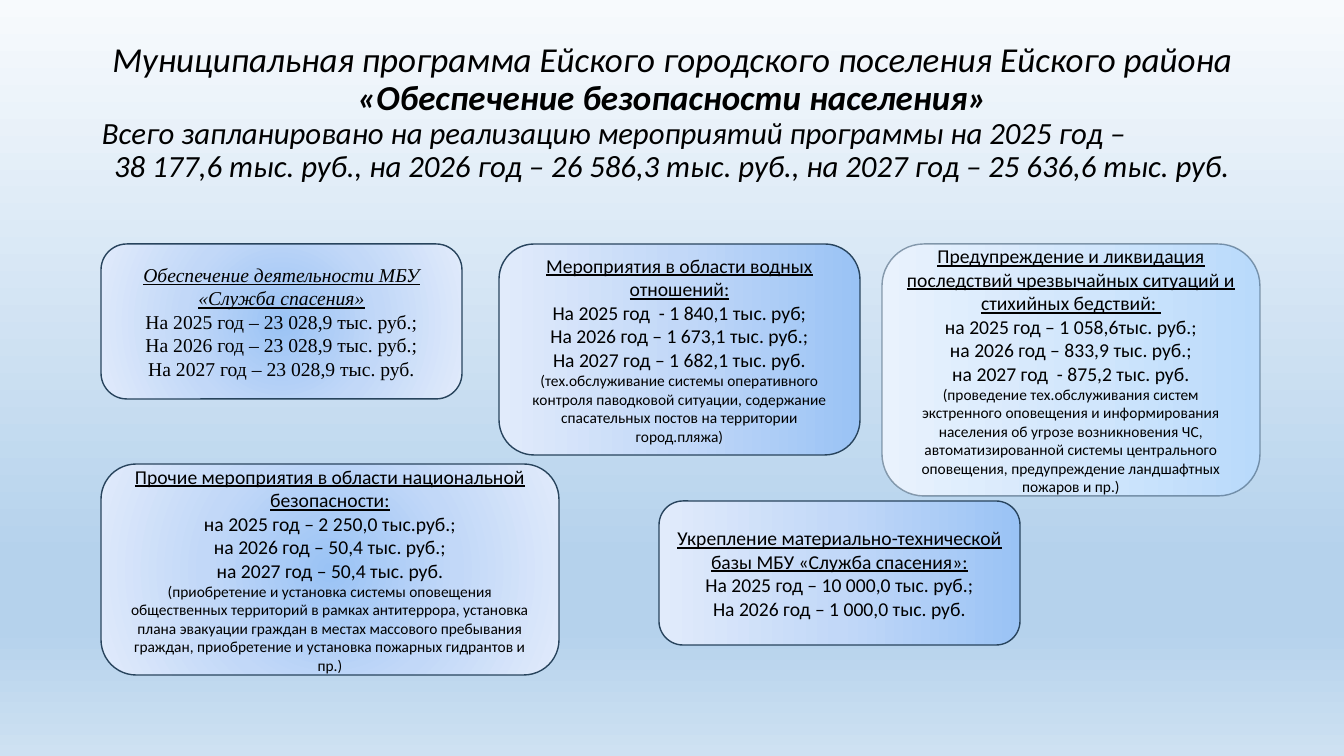
from lxml import etree
from pptx import Presentation
from pptx import util as u
from pptx.dml.color import RGBColor
from pptx.enum import shapes, text
from pptx.oxml import ns

PX = 914400 / 100.8
THEME = {
    "ink": "000000", "line": "28445D",
    "font": "Calibri", "serif": "Times New Roman",
    "title": 25, "total": 22, "head": 14, "note": 11,
    "sky": [(0, "F7FAFD"), (74, "B5D2EC"), (83, "B5D2EC"), (100, "CEE1F2")],
    "blue": [(0, "9AC3F5"), (50, "C2D8F8"), (100, "E1EBFB")],
    "pale": [(0, "B9DAFB"), (50, "D3E7FC"), (100, "E9F2FD")],
}


def write(tf, line, size=THEME["head"], font=THEME["font"], bold=False, italic=False,
          underline=False, align=text.PP_ALIGN.CENTER, spacing=1.0):
    p = tf.paragraphs[0] if not tf.text else tf.add_paragraph()
    p.alignment, p.line_spacing = align, spacing
    r = p.add_run()
    r.text = line
    r.font.name, r.font.size = font, u.Pt(size)
    r.font.bold, r.font.italic, r.font.underline = bold, italic, underline
    r.font.color.rgb = RGBColor.from_string(THEME["ink"])


def paint(fill, props, stops, angle=None):
    """Fill with a gradient: linear at an angle, or from the centre without one."""
    fill.solid()
    solid = props.find(ns.qn("a:solidFill"))
    grad = etree.Element(ns.qn("a:gradFill"), rotWithShape="1")
    stop_list = etree.SubElement(grad, ns.qn("a:gsLst"))
    for pos, color in stops:
        gs = etree.SubElement(stop_list, ns.qn("a:gs"), pos=str(pos * 1000))
        etree.SubElement(gs, ns.qn("a:srgbClr"), val=color)
    if angle is None:
        radial = etree.SubElement(grad, ns.qn("a:path"), {"path": "circle"})
        etree.SubElement(radial, ns.qn("a:fillToRect"), dict.fromkeys("ltrb", "50000"))
    else:
        etree.SubElement(grad, ns.qn("a:lin"), ang=str(angle * 60000), scaled="0")
    props.replace(solid, grad)


prs = Presentation()
prs.slide_width, prs.slide_height = u.Emu(round(1344 * PX)), u.Emu(round(756 * PX))
s = prs.slides.add_slide(prs.slide_layouts[6])

# Background
fill = s.background.fill
fill.solid()
paint(fill, s._element.xpath(".//p:bgPr")[0], THEME["sky"], 90)

# Title and programme total
sp = s.shapes.add_textbox(*[u.Emu(round(v * PX)) for v in (92, 14, 1160, 198)])
tf = sp.text_frame
tf.word_wrap, tf.vertical_anchor = True, text.MSO_ANCHOR.MIDDLE
title = {"italic": True, "spacing": 0.9}
write(tf, "Муниципальная программа Ейского городского поселения Ейского района",
      size=THEME["title"], **title)
write(tf, "«Обеспечение безопасности населения»", size=THEME["title"], bold=True, **title)
write(tf, "Всего запланировано на реализацию мероприятий программы на 2025 год –",
      size=THEME["total"], align=text.PP_ALIGN.LEFT, **title)
write(tf, "38 177,6 тыс. руб., на 2026 год – 26 586,3 тыс. руб., на 2027 год – 25 636,6 тыс. руб.",
      size=THEME["total"], **title)

# Measures: box, gradient, angle, font, heading, yearly sums, note
measures = [
    ((882, 244, 378, 252), "pale", 180, "font",
     "Предупреждение и ликвидация последствий чрезвычайных ситуаций и стихийных бедствий: ",
     ["на 2025 год – 1 058,6тыс. руб.;", "на 2026 год – 833,9 тыс. руб.;",
      "на 2027 год  - 875,2 тыс. руб."],
     "(проведение тех.обслуживания систем экстренного оповещения и информирования населения "
     "об угрозе возникновения ЧС, автоматизированной системы центрального оповещения, "
     "предупреждение ландшафтных пожаров и пр.)"),
    ((101, 244, 361, 155), "blue", None, "serif",
     "Обеспечение деятельности МБУ «Служба спасения»",
     ["На 2025 год – 23 028,9 тыс. руб.;", "На 2026 год – 23 028,9 тыс. руб.;",
      "На 2027 год – 23 028,9 тыс. руб."], None),
    ((499, 244, 361, 211), "blue", 180, "font",
     "Мероприятия в области водных отношений:",
     ["На 2025 год  - 1 840,1 тыс. руб;", "На 2026 год – 1 673,1 тыс. руб.;",
      "На 2027 год – 1 682,1 тыс. руб."],
     "(тех.обслуживание системы оперативного контроля паводковой ситуации, содержание "
     "спасательных постов на территории город.пляжа)"),
    ((101, 464, 458, 211), "blue", None, "font",
     "Прочие мероприятия в области национальной безопасности:",
     ["на 2025 год – 2 250,0 тыс.руб.;", "на 2026 год – 50,4 тыс. руб.;",
      "на 2027 год – 50,4 тыс. руб."],
     "(приобретение и установка системы оповещения общественных территорий в рамках "
     "антитеррора, установка плана эвакуации граждан в местах массового пребывания граждан, "
     "приобретение и установка пожарных гидрантов и пр.)"),
    ((659, 501, 361, 144), "blue", 180, "font",
     "Укрепление материально-технической базы МБУ «Служба спасения»:",
     ["На 2025 год – 10 000,0 тыс. руб.;", "На 2026 год – 1 000,0 тыс. руб."], None),
]
for box, gradient, angle, font, heading, sums, note in measures:
    sp = s.shapes.add_shape(shapes.MSO_SHAPE.ROUNDED_RECTANGLE,
                            *[u.Emu(round(v * PX)) for v in box])
    sp.shadow.inherit = False
    paint(sp.fill, sp._element.spPr, THEME[gradient], angle)
    sp.line.width = u.Pt(1)
    sp.line.color.rgb = RGBColor.from_string(THEME["line"])
    if gradient == "pale":  # half-transparent outline
        color = sp._element.spPr.find(".//" + ns.qn("a:ln")).find(".//" + ns.qn("a:srgbClr"))
        etree.SubElement(color, ns.qn("a:alpha"), val="49000")
    tf = sp.text_frame
    tf.word_wrap, tf.vertical_anchor = True, text.MSO_ANCHOR.MIDDLE
    write(tf, heading, font=THEME[font], underline=True, italic=font == "serif")
    for line in sums:
        write(tf, line, font=THEME[font])
    if note:
        write(tf, note, size=THEME["note"])

prs.save("out.pptx")
